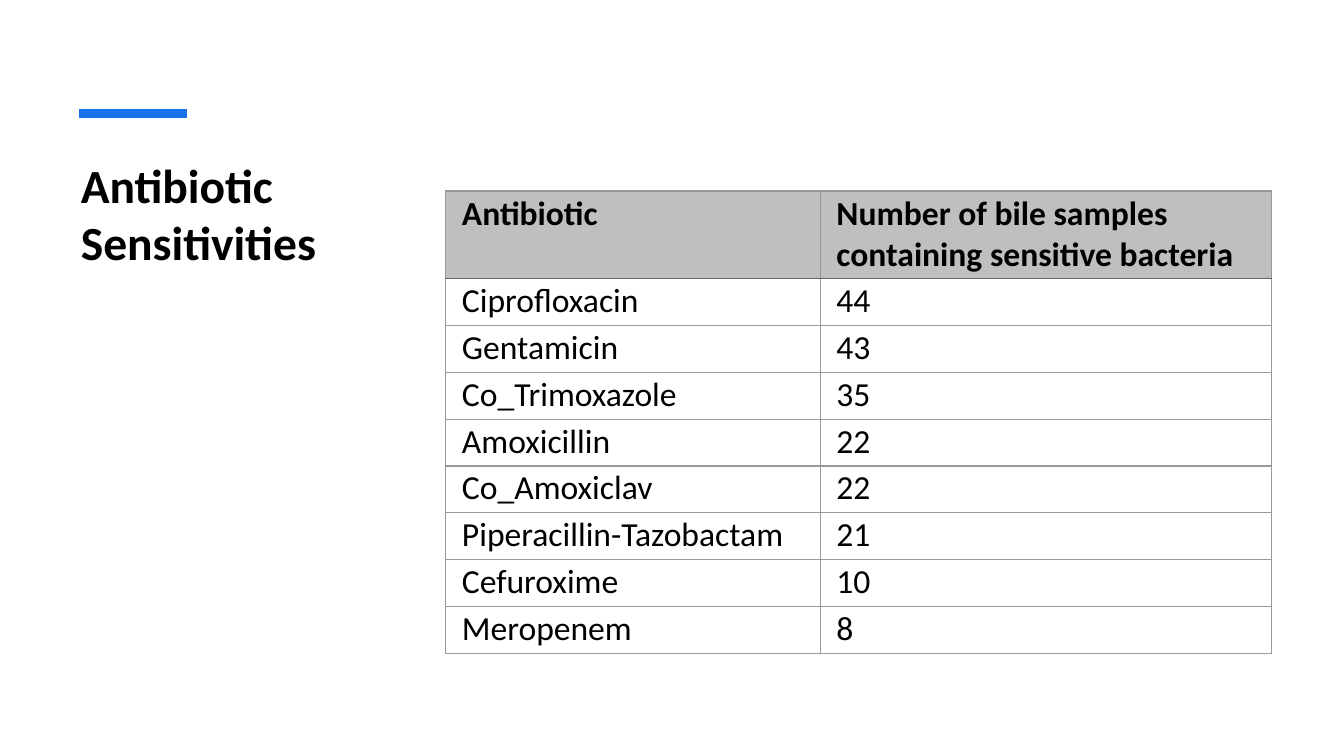
from lxml.etree import SubElement
from pptx import Presentation
from pptx.dml.color import RGBColor
from pptx.enum.shapes import MSO_CONNECTOR
from pptx.enum.text import MSO_ANCHOR, MSO_AUTO_SIZE, PP_ALIGN
from pptx.oxml.ns import qn
from pptx.util import Pt

FONT = "Calibri"
BLACK = "000000"
ACCENT = "1973EB"
GRID = "999999"
HEADER_RULE = "666666"
HEADER_FILL = "BFBFBF"

HEADINGS = ("Antibiotic", "Number of bile samples containing sensitive bacteria")
SENSITIVITIES = [
    ("Ciprofloxacin", 44),
    ("Gentamicin", 43),
    ("Co_Trimoxazole", 35),
    ("Amoxicillin", 22),
    ("Co_Amoxiclav", 22),
    ("Piperacillin-Tazobactam", 21),
    ("Cefuroxime", 10),
    ("Meropenem", 8),
]


def color(hex_code):
    return RGBColor.from_string(hex_code)


def add_run(paragraph, text, size, bold):
    run = paragraph.add_run()
    run.text = text
    run.font.name = FONT
    run.font.size = Pt(size)
    run.font.bold = bold
    run.font.color.rgb = color(BLACK)


def add_border(cell, side, hex_code, width):
    properties = cell._tc.get_or_add_tcPr()
    border = SubElement(properties, qn(f"a:ln{side}"), w=str(Pt(width)))
    fill = SubElement(border, qn("a:solidFill"))
    SubElement(fill, qn("a:srgbClr"), val=hex_code)


def fill_title(slide, left, top, width, height):
    title = slide.shapes.title
    title.left, title.top = Pt(left), Pt(top)
    title.width, title.height = Pt(width), Pt(height)
    frame = title.text_frame
    frame.word_wrap = True
    frame.auto_size = MSO_AUTO_SIZE.NONE
    frame.vertical_anchor = MSO_ANCHOR.TOP
    heading = frame.paragraphs[0]
    heading.alignment = PP_ALIGN.LEFT
    add_run(heading, "Antibiotic Sensitivities", 34, True)


def add_accent(slide, left, top, width):
    accent = slide.shapes.add_connector(
        MSO_CONNECTOR.STRAIGHT, Pt(left), Pt(top), Pt(left + width), Pt(top)
    )
    accent.line.color.rgb = color(ACCENT)
    accent.line.width = Pt(6)
    SubElement(accent._element.spPr, qn("a:effectLst"))


def fill_cell(cell, text, row):
    is_header = row == 0
    header_rule = (HEADER_RULE, 1.5)
    grid_line = (GRID, 1)
    cell.margin_left = cell.margin_right = Pt(11.5)
    cell.margin_top, cell.margin_bottom = Pt(1.5), Pt(0)
    cell.vertical_anchor = MSO_ANCHOR.TOP
    add_border(cell, "L", *grid_line)
    add_border(cell, "R", *grid_line)
    add_border(cell, "T", *(header_rule if row == 1 else grid_line))
    add_border(cell, "B", *(header_rule if is_header else grid_line))
    if is_header:
        cell.fill.solid()
        cell.fill.fore_color.rgb = color(HEADER_FILL)
    else:
        cell.fill.background()
    add_run(cell.text_frame.paragraphs[0], text, 24, is_header)


def add_sensitivity_table(slide, left, top, width, height):
    records = [HEADINGS, *SENSITIVITIES]
    header_height = 62.5
    name_width = 267.5
    table = slide.shapes.add_table(
        len(records), len(HEADINGS), Pt(left), Pt(top), Pt(width), Pt(height)
    ).table
    table.first_row = False
    table.horz_banding = False
    table.columns[0].width = Pt(name_width)
    table.columns[1].width = Pt(width - name_width)
    row_height = (height - header_height) / len(SENSITIVITIES)
    for row, record in enumerate(records):
        table.rows[row].height = Pt(row_height if row else header_height)
        for column, value in enumerate(record):
            fill_cell(table.cell(row, column), str(value), row)


def main():
    presentation = Presentation()
    presentation.slide_width = Pt(960)
    presentation.slide_height = Pt(540)
    slide = presentation.slides.add_slide(presentation.slide_layouts[5])
    fill_title(slide, 50.5, 108, 209, 327)
    add_accent(slide, 56.5, 81, 77)
    add_sensitivity_table(slide, 318.5, 136.5, 589.5, 330.5)
    presentation.save("out.pptx")


if __name__ == "__main__":
    main()
